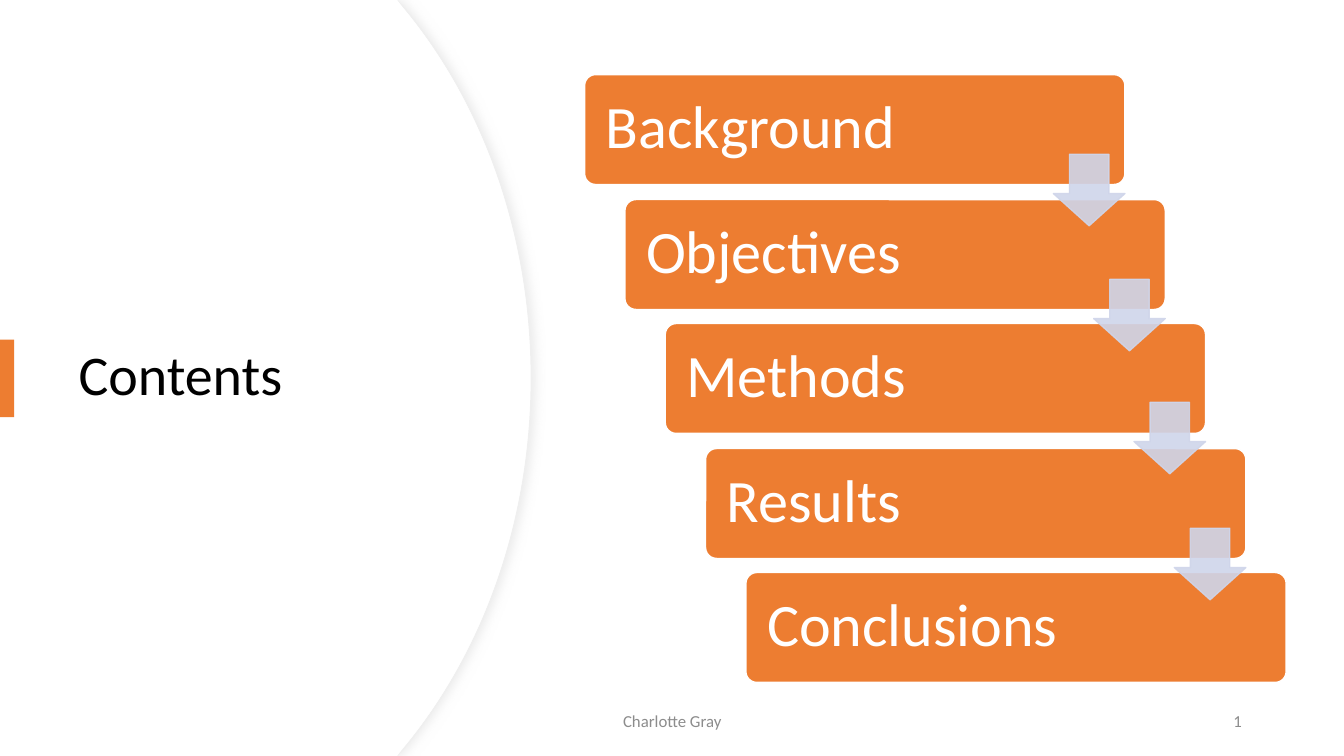
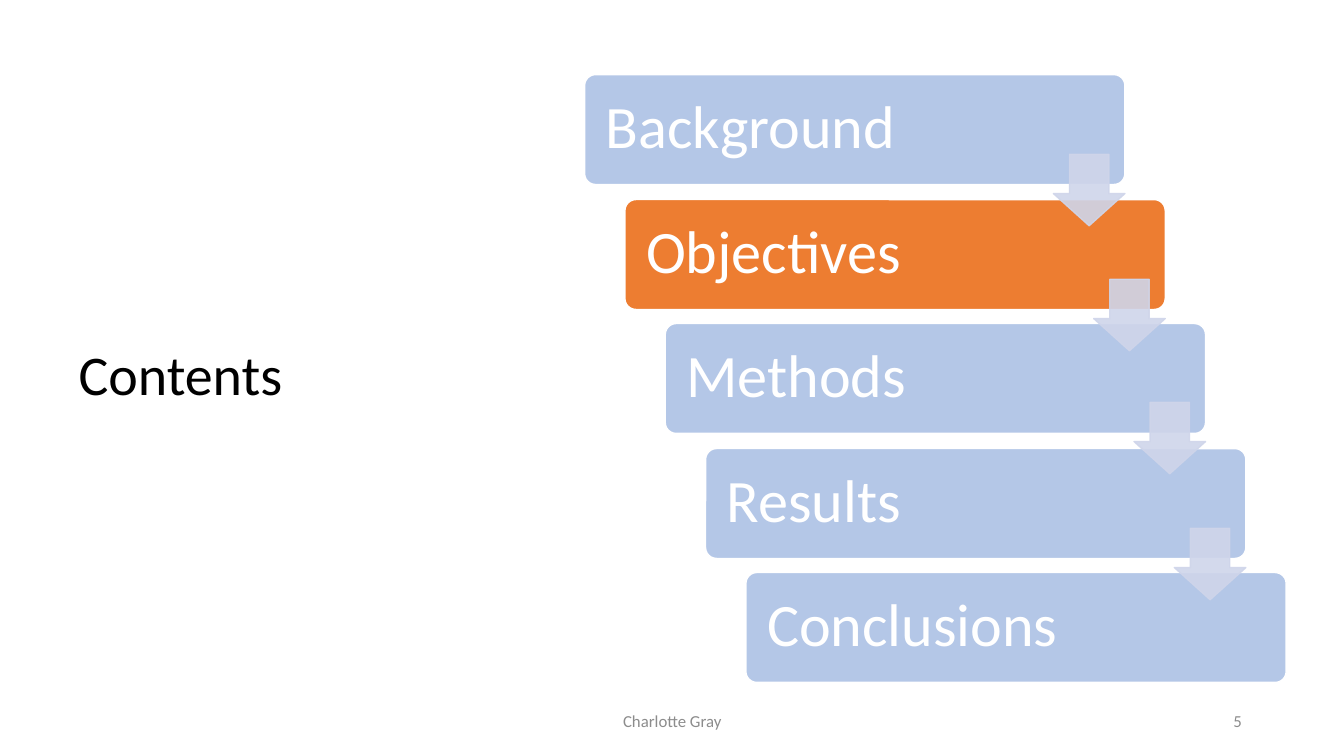
from lxml import etree
from pptx import Presentation
from pptx import util as u
from pptx.dml.color import RGBColor
from pptx.enum import shapes, text
from pptx.oxml.ns import qn

PX = 9144  # 100 px to the inch
FONT = "Calibri"
ORANGE = RGBColor(0xED, 0x7D, 0x31)
PALE_BLUE = RGBColor(0xB4, 0xC7, 0xE7)
ARROW = RGBColor(0xCF, 0xD5, 0xEA)
WHITE = RGBColor(0xFF, 0xFF, 0xFF)
BLACK = RGBColor(0x00, 0x00, 0x00)
GREY = RGBColor(0x8C, 0x8C, 0x8C)
EDGE = RGBColor(0xEF, 0xEF, 0xEF)
SHADOW = RGBColor(0xD9, 0xD9, 0xD9)

STEPS = ["Background", "Objectives", "Methods", "Results", "Conclusions"]
ARROW_TOPS = [153, 277, 399, 524]
SLIDES = [
    {"number": "1", "active": STEPS, "panel": True},
    {"number": "5", "active": ["Objectives"], "panel": False},
]


def add_block(parent, kind, box, fill, line=None):
    """Add a preset shape with a plain fill; box is left, top, width, height in px."""
    sp = parent.add_shape(kind, *[v * PX for v in box])
    sp.shadow.inherit = False
    sp.fill.solid()
    sp.fill.fore_color.rgb = fill
    if line is None:
        sp.line.fill.background()
    else:
        sp.line.color.rgb = line
        sp.line.width = u.Pt(1)
    return sp


def write(sp, words, size, color, align=text.PP_ALIGN.LEFT, spacing=1.0):
    tf = sp.text_frame
    tf.word_wrap = True
    tf.auto_size = text.MSO_AUTO_SIZE.NONE
    tf.vertical_anchor = text.MSO_ANCHOR.MIDDLE
    p = tf.paragraphs[0]
    p.alignment = align
    p.line_spacing = spacing
    r = p.add_run()
    r.text = words
    r.font.name = FONT
    r.font.size = u.Pt(size)
    r.font.color.rgb = color


prs = Presentation()
prs.slide_width = u.Inches(13.333)
prs.slide_height = u.Inches(7.5)

for page in SLIDES:
    s = prs.slides.add_slide(prs.slide_layouts[5])
    title = s.shapes.title
    title.left, title.top, title.width, title.height = [v * PX for v in (68, 127, 394, 495)]
    write(title, "Contents", 40, BLACK, spacing=0.9)

    if page["panel"]:
        # White panel with a curved right side: an outlined one, then a plain one inside it
        panels = []
        for right in (527, 526):
            upper = [(right - 126, 8), (right - 48, 102), (right, 232), (right, 375)]
            lower = [(x, 750 - y) for x, y in reversed(upper[:-1])]
            fb = s.shapes.build_freeform(0, 0, scale=PX)
            fb.add_line_segments([(394, 0)] + upper + lower + [(394, 750), (0, 750)], close=True)
            sp = fb.convert_to_shape()
            # Points 2 to 7 are the handles and ends of two Bezier curves
            points = list(sp._element.iter(qn("a:lnTo")))
            for first in (2, 5):
                curve = etree.Element(qn("a:cubicBezTo"))
                points[first].addprevious(curve)
                for point in points[first:first + 3]:
                    curve.append(point[0])
                    point.getparent().remove(point)
            sp.shadow.inherit = False
            sp.fill.solid()
            sp.fill.fore_color.rgb = WHITE
            sp.line.fill.background()
            panels.append(sp)
        outlined = panels[0]
        outlined.line.color.rgb = EDGE
        outlined.line.width = u.Pt(0.75)
        effects = outlined._element.spPr.find(qn("a:effectLst"))
        shadow = etree.SubElement(effects, qn("a:outerShdw"), blurRad=str(u.Pt(7)),
                                  dist=str(u.Pt(3)), dir="0", algn="l", rotWithShape="0")
        tint = etree.SubElement(shadow, qn("a:srgbClr"), val=str(SHADOW))
        etree.SubElement(tint, qn("a:alpha"), val="50000")

        # The panel lies behind the title
        tree = s.shapes._spTree
        tree.remove(title._element)
        tree.append(title._element)
        add_block(s.shapes, shapes.MSO_SHAPE.RECTANGLE, (0, 337, 14, 77), ORANGE)

    stairs = s.shapes.add_group_shape().shapes
    corners = [(580 + 40 * i, (149 + 247 * i) // 2) for i in range(len(STEPS))]
    for step, (x, y) in zip(STEPS, corners):
        fill = ORANGE if step in page["active"] else PALE_BLUE
        sp = add_block(stairs, shapes.MSO_SHAPE.ROUNDED_RECTANGLE, (x, y, 536, 109), fill, WHITE)
        sp.adjustments[0] = 0.1
        label = stairs.add_textbox((x + 3) * PX, (y + 3) * PX, 419 * PX, 102 * PX)
        tf = label.text_frame
        tf.margin_left = tf.margin_top = tf.margin_right = tf.margin_bottom = 18 * PX
        write(label, step, 43, WHITE, spacing=0.9)

    for (x, y), top in zip(corners, ARROW_TOPS):
        sp = add_block(stairs, shapes.MSO_SHAPE.DOWN_ARROW, (x + 465, top, 71, 71), ARROW, ARROW)
        sp.adjustments[0] = 0.55
        sp.adjustments[1] = 0.45
        for clr in sp._element.spPr.iter(qn("a:srgbClr")):
            etree.SubElement(clr, qn("a:alpha"), val="90000")

    for words, left, width, align in (
        ("Charlotte Gray", 442, 450, text.PP_ALIGN.CENTER),
        (page["number"], 942, 300, text.PP_ALIGN.RIGHT),
    ):
        footer = s.shapes.add_textbox(left * PX, 695 * PX, width * PX, 40 * PX)
        write(footer, words, 12, GREY, align)

prs.save("out.pptx")
